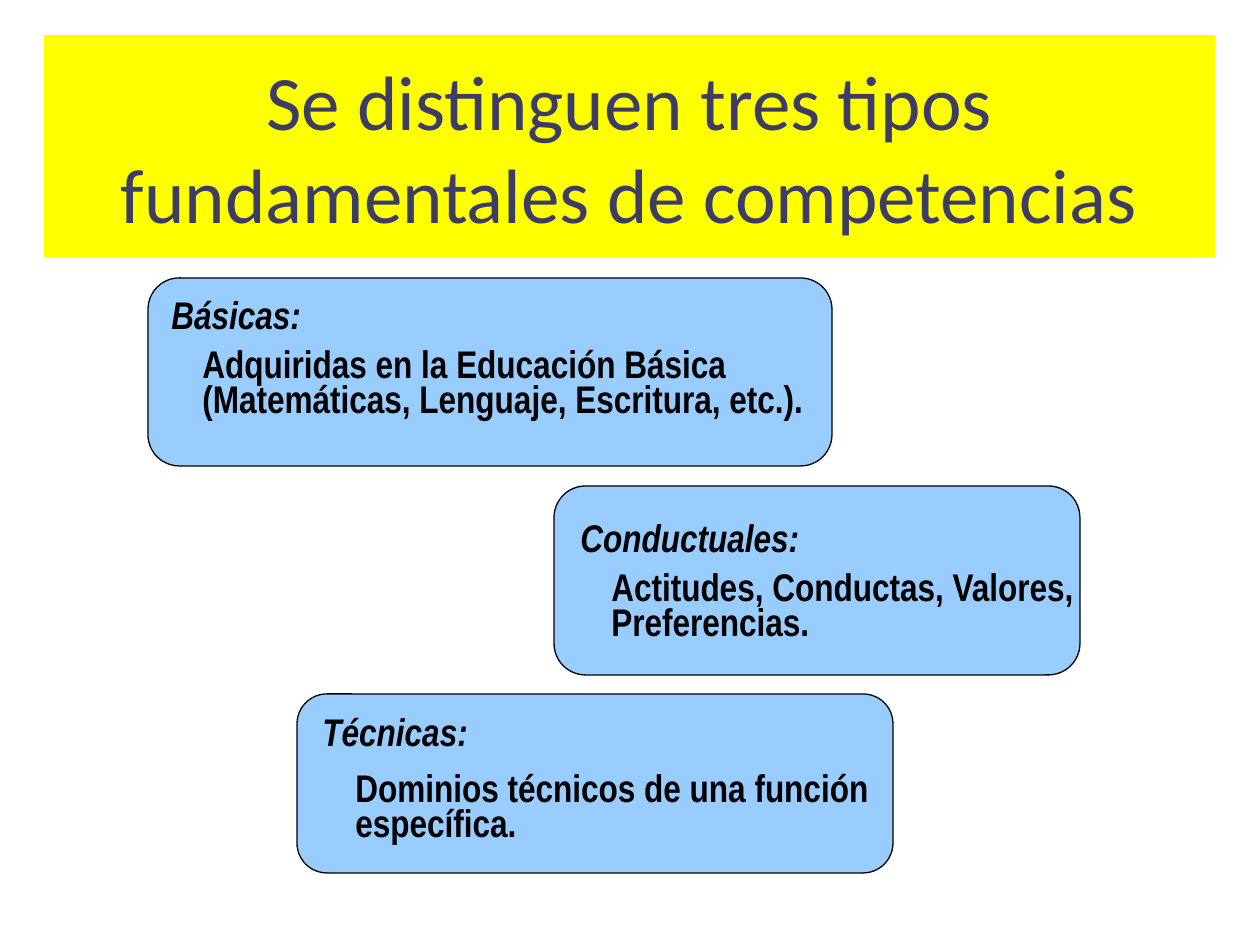
from dataclasses import dataclass

from pptx import Presentation
from pptx.dml.color import RGBColor
from pptx.enum.shapes import MSO_SHAPE
from pptx.enum.text import MSO_ANCHOR, MSO_AUTO_SIZE, PP_ALIGN
from pptx.util import Emu, Pt

TITLE = "Se distinguen tres tipos fundamentales de competencias"
TITLE_FRAME = (44, 35, 1171, 222)

# Frames are left, top, width, height in px.
COMPETENCIES = [
    {"heading": "Básicas:",
     "detail": "Adquiridas en la Educación Básica (Matemáticas, Lenguaje, Escritura, etc.).",
     "card": (148, 278, 684, 188),
     "heading_frame": (159, 285, 156, 50),
     "detail_frame": (190, 345, 643, 71)},
    {"heading": "Técnicas:",
     "detail": "Dominios técnicos de una función específica.",
     "card": (297, 694, 596, 179),
     "heading_frame": (310, 702, 171, 55),
     "detail_frame": (343, 769, 563, 82)},
    {"heading": "Conductuales:",
     "detail": "Actitudes, Conductas, Valores, Preferencias.",
     "card": (554, 486, 526, 189),
     "heading_frame": (568, 508, 246, 59),
     "detail_frame": (599, 568, 494, 82)},
]


@dataclass(frozen=True)
class Theme:
    banner: RGBColor = RGBColor(0xFF, 0xFF, 0x00)
    title: RGBColor = RGBColor(0x3C, 0x3C, 0x65)
    card: RGBColor = RGBColor(0x99, 0xCC, 0xFF)
    ink: RGBColor = RGBColor(0x00, 0x00, 0x00)
    title_font: str = "Calibri"
    body_font: str = "Arial Narrow"
    title_size: int = 44
    body_size: int = 22
    outline: float = 0.75
    corner: float = 0.167
    detail_spacing: float = 0.75


THEME = Theme()


def px(length):
    return Emu(round(length * 914400 / 126))


def place(frame):
    return [px(length) for length in frame]


def add_panel(shapes, kind, frame, color):
    panel = shapes.add_shape(kind, *place(frame))
    panel.shadow.inherit = False
    panel.fill.solid()
    panel.fill.fore_color.rgb = color
    return panel


def style_font(font, name, size, color):
    font.name = name
    font.size = Pt(size)
    font.color.rgb = color


def add_title(shapes):
    banner = add_panel(shapes, MSO_SHAPE.RECTANGLE, TITLE_FRAME, THEME.banner)
    banner.line.fill.background()
    frame = banner.text_frame
    frame.word_wrap = True
    frame.vertical_anchor = MSO_ANCHOR.MIDDLE
    frame.text = TITLE
    para = frame.paragraphs[0]
    para.alignment = PP_ALIGN.CENTER
    style_font(para.runs[0].font, THEME.title_font, THEME.title_size, THEME.title)


def add_label(shapes, text, frame, wrap, italic=False, spacing=None):
    box = shapes.add_textbox(*place(frame))
    box.text_frame.word_wrap = wrap
    box.text_frame.auto_size = MSO_AUTO_SIZE.SHAPE_TO_FIT_TEXT
    box.text_frame.text = text
    para = box.text_frame.paragraphs[0]
    para.line_spacing = spacing
    font = para.runs[0].font
    style_font(font, THEME.body_font, THEME.body_size, THEME.ink)
    font.bold = True
    font.italic = italic


def add_competency(slide, item):
    shapes = slide.shapes.add_group_shape().shapes
    card = add_panel(shapes, MSO_SHAPE.ROUNDED_RECTANGLE, item["card"], THEME.card)
    card.adjustments[0] = THEME.corner
    card.line.color.rgb = THEME.ink
    card.line.width = Pt(THEME.outline)
    add_label(shapes, item["heading"], item["heading_frame"], wrap=False, italic=True)
    add_label(shapes, item["detail"], item["detail_frame"], wrap=True,
              spacing=THEME.detail_spacing)


def main():
    deck = Presentation()
    deck.slide_width, deck.slide_height = px(1260), px(945)
    slide = deck.slides.add_slide(deck.slide_layouts[6])
    add_title(slide.shapes)
    for item in COMPETENCIES:
        add_competency(slide, item)
    deck.save("out.pptx")


if __name__ == "__main__":
    main()
